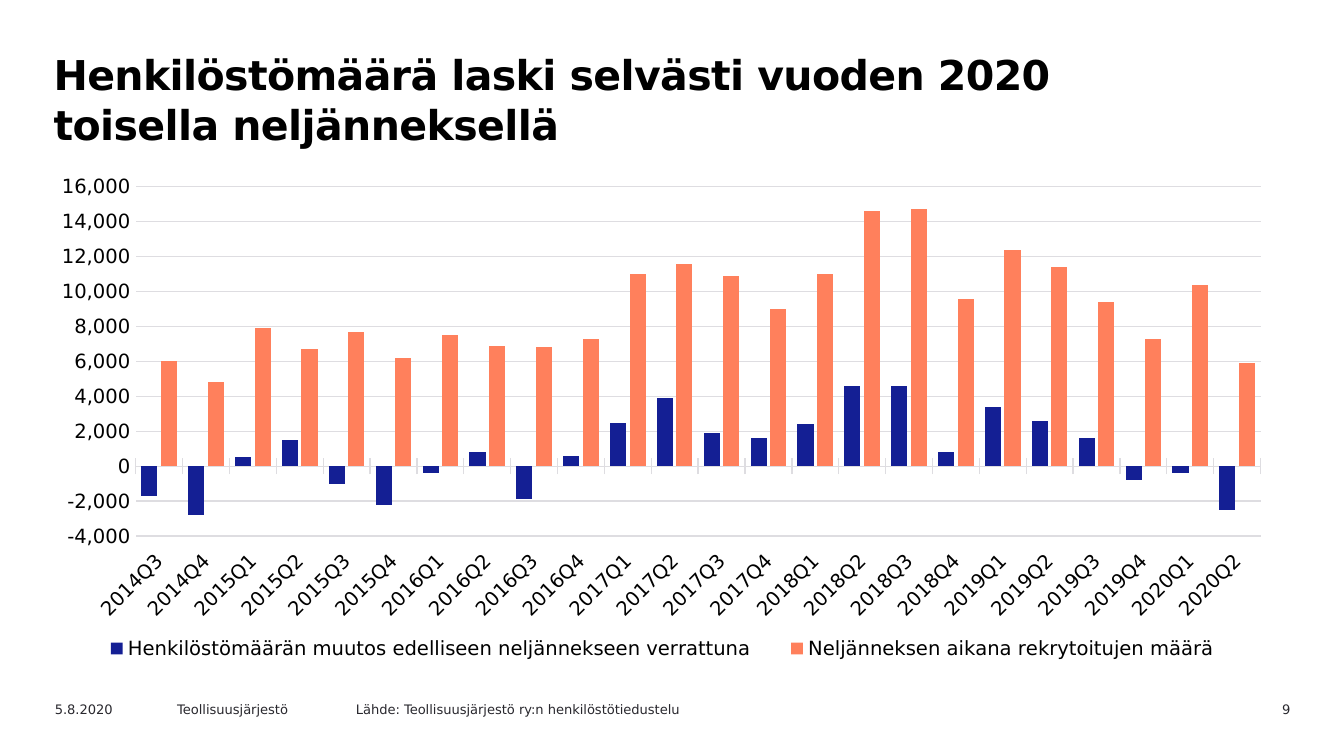
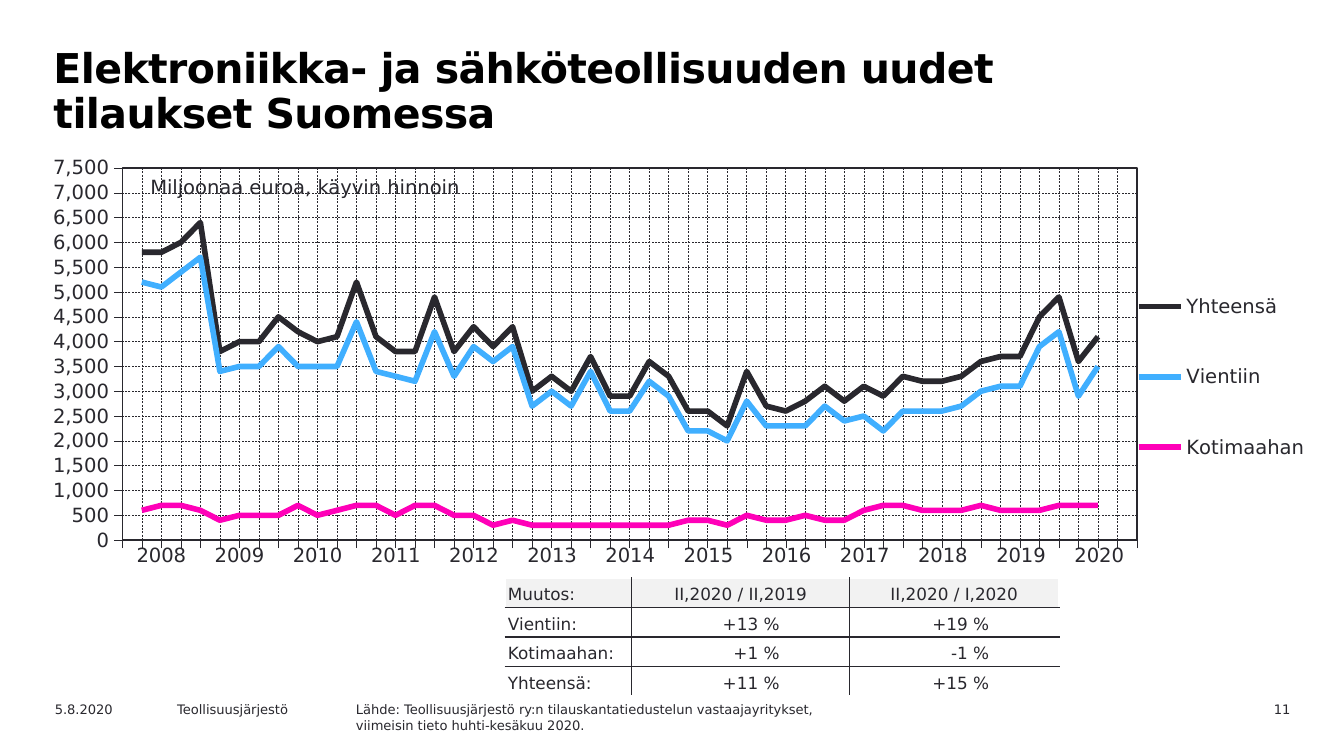
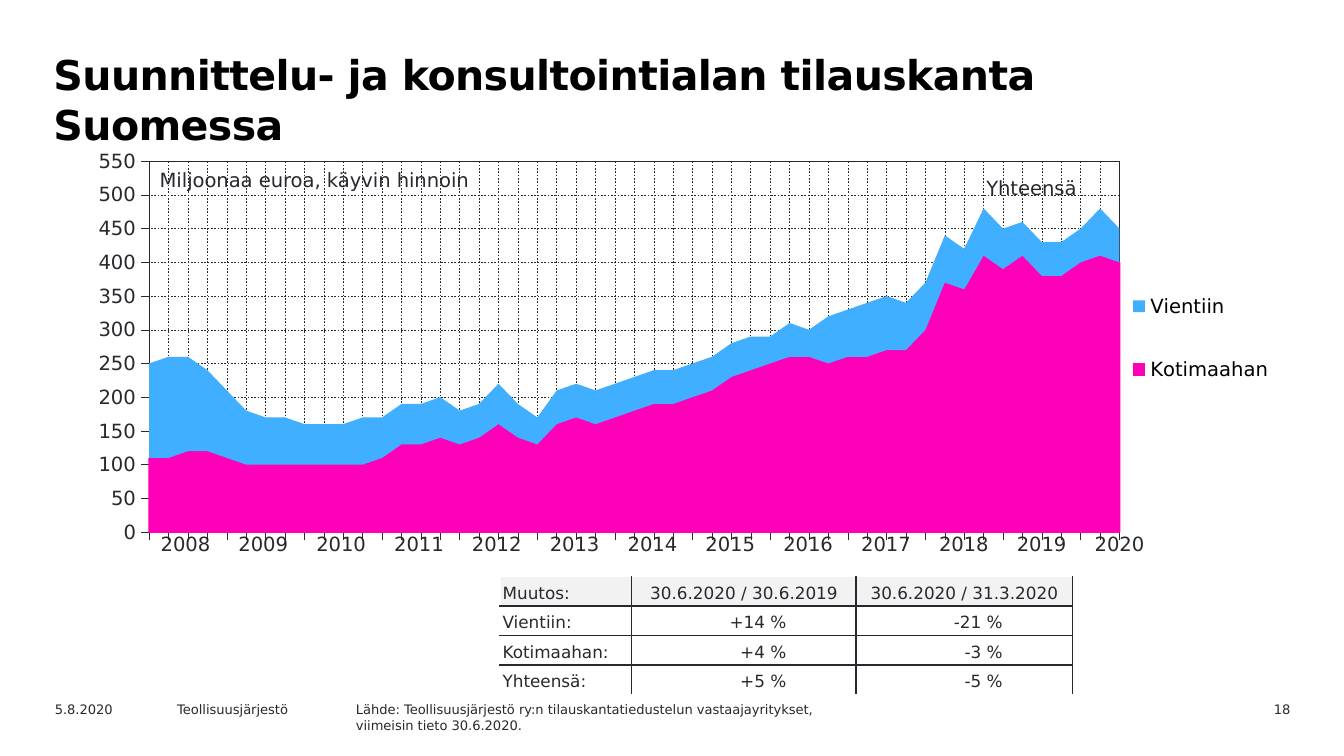
from pptx import Presentation
from pptx.chart.data import CategoryChartData
from pptx.dml.color import RGBColor
from pptx.enum.chart import XL_CHART_TYPE, XL_LEGEND_POSITION, XL_TICK_LABEL_POSITION, XL_TICK_MARK
from pptx.enum.dml import MSO_LINE
from pptx.enum.text import MSO_ANCHOR, MSO_AUTO_SIZE, PP_ALIGN
from pptx.oxml import parse_xml
from pptx.oxml.ns import nsdecls, qn
from pptx.util import Inches, Pt

COLUMNS = XL_CHART_TYPE.COLUMN_CLUSTERED
LINES = XL_CHART_TYPE.LINE
AREAS = XL_CHART_TYPE.AREA_STACKED
LEGEND_BOTTOM, LEGEND_RIGHT = XL_LEGEND_POSITION.BOTTOM, XL_LEGEND_POSITION.RIGHT
LABELS_LOW, LABELS_NONE = XL_TICK_LABEL_POSITION.LOW, XL_TICK_LABEL_POSITION.NONE
TICK_CROSS, TICK_NONE, TICK_OUT = XL_TICK_MARK.CROSS, XL_TICK_MARK.NONE, XL_TICK_MARK.OUTSIDE
DASH = MSO_LINE.DASH
BOTTOM = MSO_ANCHOR.BOTTOM
GROW = MSO_AUTO_SIZE.SHAPE_TO_FIT_TEXT
LEFT, CENTER, RIGHT = PP_ALIGN.LEFT, PP_ALIGN.CENTER, PP_ALIGN.RIGHT

WIDTH = Inches(10)
HEIGHT = WIDTH * 9 // 16
FONT = "DejaVu Sans"
BLACK, INK, WHITE = "000000", "29282E", "FFFFFF"
PALE, RULE = "F2F2F2", "DEDDE1"
NAVY, CORAL, SKY, PINK = "141F94", "FF805C", "40AFFF", "FF00B8"
PLAIN_TABLE = "{2D5ABB26-0587-4C30-8999-92F81FD0307C}"
YEARS = range(2008, 2021)
UNIT = "Miljoonaa euroa, käyvin hinnoin"
PUBLISHER = "Teollisuusjärjestö"
ORDER_SOURCE = f"Lähde: {PUBLISHER} ry:n tilauskantatiedustelun vastaajayritykset,"

QUARTERS = [f"{year}Q{quarter}" for year in range(2014, 2021) for quarter in range(1, 5)][2:26]
STAFF = {
    "Henkilöstömäärän muutos edelliseen neljännekseen verrattuna": (NAVY, [
        -1700, -2800, 500, 1500, -1000, -2200, -400, 800, -1900, 600, 2500, 3900,
        1900, 1600, 2400, 4600, 4600, 800, 3400, 2600, 1600, -800, -400, -2500]),
    "Neljänneksen aikana rekrytoitujen määrä": (CORAL, [
        6000, 4800, 7900, 6700, 7700, 6200, 7500, 6900, 6800, 7300, 11000, 11600,
        10900, 9000, 11000, 14600, 14700, 9600, 12400, 11400, 9400, 7300, 10400, 5900]),
}
NEW_ORDERS = {
    "Yhteensä": (INK, [
        None, 5800, 5800, 6000, 6400, 3800, 4000, 4000, 4500, 4200, 4000, 4100, 5200,
        4100, 3800, 3800, 4900, 3800, 4300, 3900, 4300, 3000, 3300, 3000, 3700,
        2900, 2900, 3600, 3300, 2600, 2600, 2300, 3400, 2700, 2600, 2800, 3100,
        2800, 3100, 2900, 3300, 3200, 3200, 3300, 3600, 3700, 3700, 4500, 4900,
        3600, 4100, None, None]),
    "Vientiin": (SKY, [
        None, 5200, 5100, 5400, 5700, 3400, 3500, 3500, 3900, 3500, 3500, 3500, 4400,
        3400, 3300, 3200, 4200, 3300, 3900, 3600, 3900, 2700, 3000, 2700, 3400,
        2600, 2600, 3200, 2900, 2200, 2200, 2000, 2800, 2300, 2300, 2300, 2700,
        2400, 2500, 2200, 2600, 2600, 2600, 2700, 3000, 3100, 3100, 3900, 4200,
        2900, 3500, None, None]),
    "Kotimaahan": (PINK, [
        None, 600, 700, 700, 600, 400, 500, 500, 500, 700, 500, 600, 700,
        700, 500, 700, 700, 500, 500, 300, 400, 300, 300, 300, 300,
        300, 300, 300, 300, 400, 400, 300, 500, 400, 400, 500, 400,
        400, 600, 700, 700, 600, 600, 600, 700, 600, 600, 600, 700,
        700, 700, None, None]),
}
ORDER_BOOK = {
    "Kotimaahan": (PINK, [
        110, 110, 120, 120, 110, 100, 100, 100, 100, 100, 100, 100, 110, 130, 130, 140, 130,
        140, 160, 140, 130, 160, 170, 160, 170, 180, 190, 190, 200, 210, 230, 240, 250, 260,
        260, 250, 260, 260, 270, 270, 300, 370, 360, 410, 390, 410, 380, 380, 400, 410, 400]),
    "Vientiin": (SKY, [
        140, 150, 140, 120, 100, 80, 70, 70, 60, 60, 60, 70, 60, 60, 60, 60, 50,
        50, 60, 50, 40, 50, 50, 50, 50, 50, 50, 50, 50, 50, 50, 50, 40, 50,
        40, 70, 70, 80, 80, 70, 70, 70, 60, 70, 60, 50, 50, 50, 50, 70, 50]),
}
NEW_ORDER_CHANGES = [
    ("Muutos:", "II,2020 / II,2019", "II,2020 / I,2020"),
    ("Vientiin:", "+13 %", "+19 %"),
    ("Kotimaahan:", "+1 %", "-1 %"),
    ("Yhteensä:", "+11 %", "+15 %"),
]
ORDER_BOOK_CHANGES = [
    ("Muutos:", "30.6.2020 / 30.6.2019", "30.6.2020 / 31.3.2020"),
    ("Vientiin:", "+14 %", "-21 %"),
    ("Kotimaahan:", "+4 %", "-3 %"),
    ("Yhteensä:", "+5 %", "-5 %"),
]


def rgb(color):
    return RGBColor.from_string(color)


def assign(target, **values):
    for name, value in values.items():
        setattr(target, name, value)


def style_font(font, size, color=INK, bold=False):
    assign(font, name=FONT, size=Pt(size), bold=bold)
    font.color.rgb = rgb(color)


def style_line(line, color, width, dash=None):
    line.color.rgb = rgb(color)
    line.width = Pt(width)
    if dash:
        line.dash_style = dash


def fill_solid(fill, color):
    fill.solid()
    fill.fore_color.rgb = rgb(color)


def layout_xml(frame, box, inner=False):
    target = '<c:layoutTarget val="inner"/>' if inner else ""
    modes = "".join(f'<c:{side}Mode val="edge"/>' for side in "xy")
    sizes = "".join(f'<c:{side} val="{length / whole}"/>'
                    for side, length, whole in zip("xywh", frame, box[2:] * 2))
    return parse_xml(f'<c:layout {nsdecls("c")}><c:manualLayout>{target}{modes}{sizes}'
                     '</c:manualLayout></c:layout>')


def drop_layout(parent):
    for layout in parent.findall(qn("c:layout")):
        parent.remove(layout)


class Deck:
    def __init__(self):
        self.presentation = Presentation()
        assign(self.presentation, slide_width=WIDTH, slide_height=HEIGHT)
        self.slide = None

    def add_slide(self, title, number, source, title_width=8.74, line_spacing=Pt(27)):
        self.slide = self.presentation.slides.add_slide(self.presentation.slide_layouts[6])
        heading = self.text([title], (0.28, 0.31, title_width, 0.71), 22, BLACK, bold=True)
        paragraph = heading.paragraphs[0]
        paragraph.line_spacing = line_spacing
        paragraph._p.get_or_add_pPr().set("marL", str(Inches(0.02)))
        paragraph.runs[0].font._element.set("spc", "-30")
        for lines, left, width, align in (
            ([number], 8.76, 0.94, RIGHT),
            (["5.8.2020"], 0.31, 1, LEFT),
            ([PUBLISHER], 1.22, 1.42, LEFT),
            (source, 2.55, 5.07, LEFT),
        ):
            self.text(lines, (left, 5.17, width, 0.18), 7, align=align)

    def text(self, lines, box, size, color=INK, bold=False, align=LEFT, wrap=True):
        frame = self.slide.shapes.add_textbox(*map(Inches, box)).text_frame
        frame.word_wrap = wrap
        for index, line in enumerate(lines):
            paragraph = frame.add_paragraph() if index else frame.paragraphs[0]
            paragraph.alignment = align
            run = paragraph.add_run()
            run.text = line
            style_font(run.font, size, color, bold)
        return frame

    def label(self, words, box, wrap=False):
        self.text([words], box, 10.5, wrap=wrap).auto_size = GROW

    def chart(self, kind, box, categories, series, legend_position, color, plot, legend):
        data = CategoryChartData()
        data.categories = categories
        for name, (_, values) in series.items():
            data.add_series(name, values)
        chart = self.slide.shapes.add_chart(kind, *map(Inches, box), data).chart
        assign(chart, has_title=False, has_legend=True)
        assign(chart.legend, position=legend_position, include_in_layout=False)
        chart.plots[0].vary_by_categories = False
        for font in (chart.font, chart.legend.font,
                     chart.category_axis.tick_labels.font, chart.value_axis.tick_labels.font):
            style_font(font, 10.5, color)
        assign(chart.value_axis.tick_labels, number_format="#,##0", number_format_is_linked=False)
        for drawn, (tint, _) in zip(chart.plots[0].series, series.values()):
            if kind == LINES:
                drawn.smooth = False
                style_line(drawn.format.line, tint, 3)
            else:
                fill_solid(drawn.format.fill, tint)
        plot_area = chart.value_axis._element.getparent()
        drop_layout(plot_area)
        plot_area.insert(0, layout_xml(plot, box, inner=True))
        drop_layout(chart.legend._element)
        chart.legend._element.find(qn("c:legendPos")).addnext(layout_xml(legend, box))
        return chart

    def column_chart(self, box, categories, series, plot, legend):
        chart = self.chart(COLUMNS, box, categories, series, LEGEND_BOTTOM, BLACK, plot, legend)
        assign(chart.plots[0], gap_width=70, overlap=-21)
        quarters, amounts = chart.category_axis, chart.value_axis
        assign(quarters, tick_label_position=LABELS_LOW, major_tick_mark=TICK_CROSS)
        quarters._element.find(qn("c:txPr")).find(qn("a:bodyPr")).set("rot", "-2700000")
        style_line(quarters.format.line, RULE, 0.75)
        assign(amounts, minimum_scale=-4000, major_tick_mark=TICK_NONE, has_major_gridlines=True)
        amounts.format.line.fill.background()
        style_line(amounts.major_gridlines.format.line, RULE, 0.75)

    def trend_chart(self, kind, box, series, top, step, plot, legend, legend_color=INK):
        count = len(next(iter(series.values()))[1])
        categories = [str(quarter) for quarter in range(1, count + 1)]
        chart = self.chart(kind, box, categories, series, LEGEND_RIGHT, INK, plot, legend)
        style_font(chart.legend.font, 10.5, legend_color)
        quarters, amounts = chart.category_axis, chart.value_axis
        quarters.tick_label_position = LABELS_NONE
        assign(amounts, minimum_scale=0, maximum_scale=top, major_unit=step)
        for axis in (quarters, amounts):
            assign(axis, major_tick_mark=TICK_OUT, has_major_gridlines=True)
            style_line(axis.format.line, INK, 0.22)
            style_line(axis.major_gridlines.format.line, INK, 0.25, DASH)
        for crossing in amounts._element.findall(qn("c:crossBetween")):
            amounts._element.remove(crossing)
        amounts._element.find(qn("c:crosses")).addnext(
            parse_xml(f'<c:crossBetween {nsdecls("c")} val="midCat"/>'))
        amounts._element.getparent().append(parse_xml(
            f'<c:spPr {nsdecls("c", "a")}><a:noFill/><a:ln w="9525"><a:solidFill>'
            f'<a:srgbClr val="{INK}"/></a:solidFill></a:ln></c:spPr>'))
        return chart

    def table(self, rows, left, top, widths, row_height):
        frame = self.slide.shapes.add_table(
            len(rows), len(widths), Inches(left), Inches(top),
            Inches(sum(widths)), Inches(row_height * len(rows)))
        table = frame.table
        assign(table, first_row=False, horz_banding=False)
        table._tbl.tblPr.find(qn("a:tableStyleId")).text = PLAIN_TABLE
        for column, width in zip(table.columns, widths):
            column.width = Inches(width)
        for row in table.rows:
            row.height = Inches(row_height)
        return table

    def write_cell(self, cell, words, size, align):
        paragraph = cell.text_frame.paragraphs[0]
        paragraph.alignment = align
        run = paragraph.add_run()
        run.text = words
        style_font(run.font, size)
        cell.fill.background()

    def year_table(self, left, top, width):
        table = self.table([YEARS], left, top, [width / len(YEARS)] * len(YEARS), 0.31)
        for cell, year in zip(table.rows[0].cells, YEARS):
            self.write_cell(cell, str(year), 10.5, CENTER)

    def change_table(self, rows, left, top, widths, right_edge):
        table = self.table(rows, left, top, widths, 0.22)
        last_row, last_column = len(rows) - 1, len(widths) - 1
        for r, row in enumerate(rows):
            for c, words in enumerate(row):
                cell = table.cell(r, c)
                is_value = r > 0 and c > 0
                align = RIGHT if is_value else CENTER if c else LEFT
                self.write_cell(cell, words, 9, align)
                margin = Inches(0.02)
                assign(cell, vertical_anchor=BOTTOM, margin_left=margin, margin_top=margin,
                       margin_bottom=margin, margin_right=Inches(0.52) if is_value else margin)
                if r in (0, last_row):
                    fill_solid(cell.fill, WHITE if r else PALE)
                self.border(cell, {
                    "L": INK if c else WHITE,
                    "R": INK if c < last_column else right_edge,
                    "T": INK if r else WHITE,
                    "B": INK if r < last_row else WHITE,
                })

    def border(self, cell, edges):
        properties = cell._tc.get_or_add_tcPr()
        for index, (side, color) in enumerate(edges.items()):
            properties.insert(index, parse_xml(
                f'<a:ln{side} {nsdecls("a")} w="12700"><a:solidFill>'
                f'<a:srgbClr val="{color}"/></a:solidFill></a:ln{side}>'))


def staff_slide(deck):
    deck.add_slide("Henkilöstömäärä laski selvästi vuoden 2020 toisella neljänneksellä", "9",
                   [f"Lähde: {PUBLISHER} ry:n henkilöstötiedustelu"], title_width=8.58)
    deck.column_chart((0.28, 1.24, 9.29, 3.78), QUARTERS, STAFF,
                      plot=(0.73, 0.15, 8.37, 2.6), legend=(0.3, 3.46, 8.7, 0.25))


def new_orders_slide(deck):
    deck.add_slide("Elektroniikka- ja sähköteollisuuden uudet tilaukset Suomessa", "11",
                   [ORDER_SOURCE, "viimeisin tieto huhti-kesäkuu 2020."], line_spacing=0.9)
    deck.trend_chart(LINES, (0.12, 1.11, 9.69, 3.33), NEW_ORDERS, 7500, 500,
                     plot=(0.79, 0.14, 7.55, 2.77), legend=(8.29, 0.73, 1.36, 1.93))
    deck.label(UNIT, (1.02, 1.25, 2.6, 0.27))
    deck.change_table(NEW_ORDER_CHANGES, 3.76, 4.3, (0.94, 1.62, 1.56), right_edge=WHITE)
    deck.year_table(0.91, 4, 7.56)


def order_book_slide(deck):
    deck.add_slide("Suunnittelu- ja konsultointialan tilauskanta Suomessa", "18",
                   [ORDER_SOURCE, "viimeisin tieto 30.6.2020."])
    chart = deck.trend_chart(AREAS, (0.42, 1.11, 9.18, 3.12), ORDER_BOOK, 550, 50,
                             plot=(0.69, 0.09, 7.22, 2.76), legend=(7.92, 0.78, 1.19, 1.25),
                             legend_color=BLACK)
    style_line(chart.plots[0].series[0].format.line, PINK, 0.88)
    deck.label(UNIT, (1.09, 1.2, 2.6, 0.27))
    deck.change_table(ORDER_BOOK_CHANGES, 3.72, 4.29, (0.98, 1.67, 1.61), right_edge=INK)
    deck.label("Yhteensä", (7.24, 1.26, 1.06, 0.27), wrap=True)
    deck.year_table(1.09, 3.92, 7.53)


def main():
    deck = Deck()
    staff_slide(deck)
    new_orders_slide(deck)
    order_book_slide(deck)
    deck.presentation.save("out.pptx")


if __name__ == "__main__":
    main()
